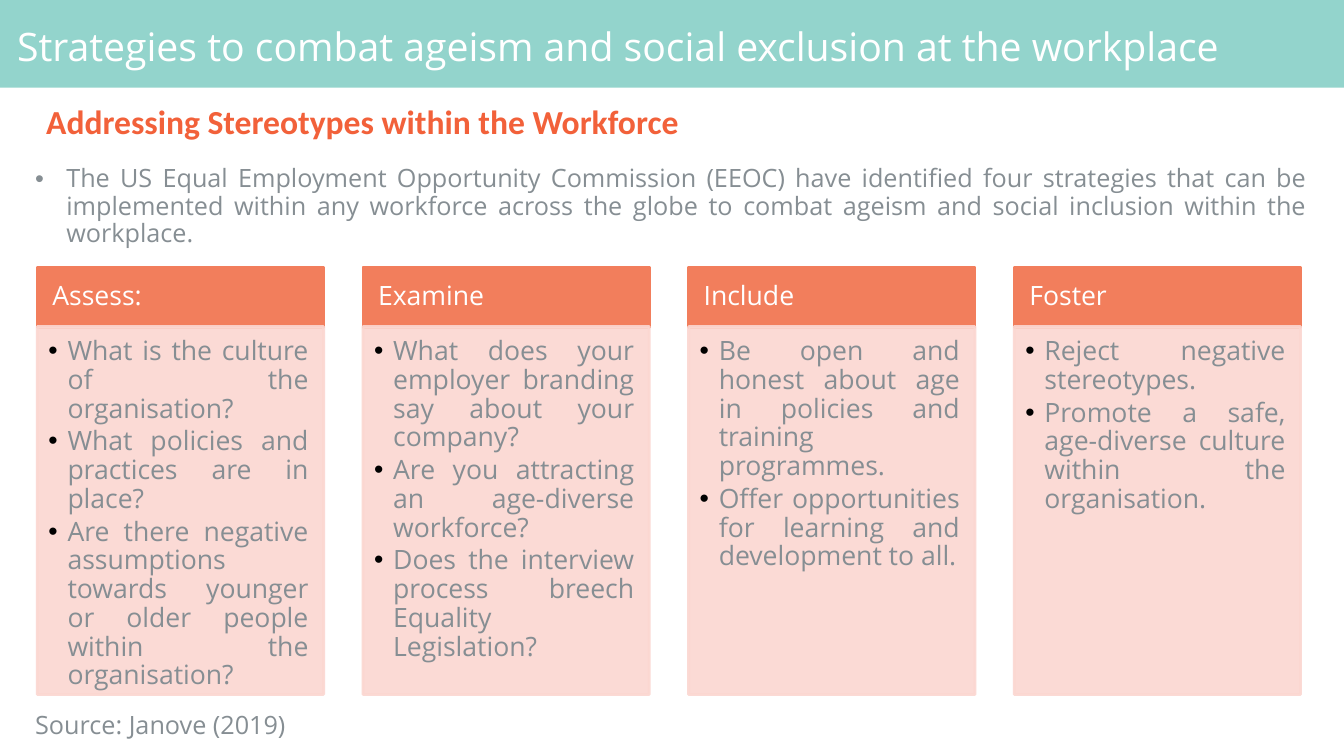
"""Build the slide on strategies against ageism at the workplace."""
import pptx
import pptx.dml.color
import pptx.enum.shapes
import pptx.enum.text
import pptx.oxml
import pptx.oxml.ns
import pptx.util

Inches, Pt = pptx.util.Inches, pptx.util.Pt
ALIGN = pptx.enum.text.PP_ALIGN
ANCHOR = pptx.enum.text.MSO_ANCHOR

TITLE = "Strategies to combat ageism and social exclusion at the workplace"
HEADING = "Addressing Stereotypes within the Workforce"
INTRO = ("The US Equal Employment Opportunity Commission (EEOC) have identified four "
         "strategies that can be implemented within any workforce across the globe to "
         "combat ageism and social inclusion within the workplace.")
SOURCE = "Source: Janove (2019)"
STRATEGIES = [
    ("Assess:", ["What is the culture of the organisation?",
                 "What policies and practices are in place?",
                 "Are there negative assumptions towards younger or older people "
                 "within the organisation?"]),
    ("Examine", ["What does your employer branding say about your company?",
                 "Are you attracting an age-diverse workforce?",
                 "Does the interview process breech Equality Legislation?"]),
    ("Include", ["Be open and honest about age in policies and training programmes.",
                 "Offer opportunities for learning and development to all."]),
    ("Foster", ["Reject negative stereotypes.",
                "Promote a safe, age-diverse culture within the organisation."]),
]
TEAL, ORANGE, RED, PINK = "93D4CC", "F27E5C", "F2613A", "FBD7D1"
GREY, WHITE, BLACK = "868E93", "FFFFFF", "000000"
LEFT, PITCH, CARD_W = 0.37, 3.23, 2.84
HEAD_TOP, HEAD_H, LIST_H = 2.65, 0.6, 3.65
LIST_TOP = HEAD_TOP + HEAD_H - 0.01


def rgb(value):
    return pptx.dml.color.RGBColor.from_string(value)


def add_rect(s, box, color, border=False, alpha=None):
    sp = s.shapes.add_shape(pptx.enum.shapes.MSO_SHAPE.RECTANGLE, *map(Inches, box))
    sp.shadow.inherit = False
    sp.fill.solid()
    sp.fill.fore_color.rgb = rgb(color)
    if border:
        sp.line.color.rgb = rgb(color)
        sp.line.width = Pt(2)
    else:
        sp.line.fill.background()
    if alpha:
        for clr in sp._element.spPr.iter(pptx.oxml.ns.qn("a:srgbClr")):
            clr.append(pptx.oxml.parse_xml(
                f'<a:alpha {pptx.oxml.ns.nsdecls("a")} val="{alpha * 1000}"/>'))
    return sp


def add_bullet(p, color):
    for xml in (f'<a:buClr {{}}><a:srgbClr val="{color}"/></a:buClr>',
                '<a:buFont {} typeface="Arial"/>', '<a:buChar {} char="•"/>'):
        p._p.get_or_add_pPr().append(
            pptx.oxml.parse_xml(xml.format(pptx.oxml.ns.nsdecls("a"))))


def write(sp, lines, size, color, insets=(0.1, 0.05, 0.1, 0.05), anchor=ANCHOR.TOP,
          align=ALIGN.JUSTIFY, font="Open Sans", bold=False, indent=(0, 0),
          bullet=None, gap=0):
    tf = sp.text_frame
    tf.word_wrap = True
    tf.vertical_anchor = anchor
    tf.margin_left, tf.margin_top, tf.margin_right, tf.margin_bottom = map(Inches, insets)
    for i, line in enumerate(lines):
        p = tf.add_paragraph() if i else tf.paragraphs[0]
        p.text = line
        p.alignment = align
        p.line_spacing = 0.9
        p.space_before = Pt(gap if i else 0)
        pPr = p._p.get_or_add_pPr()
        pPr.set("marL", str(Inches(indent[0])))
        pPr.set("indent", str(Inches(indent[1])))
        if bullet:
            add_bullet(p, bullet)
        for r in p.runs:
            r.font.size, r.font.name, r.font.bold = Pt(size), font, bold
            r.font.color.rgb = rgb(color)


def add_text(s, box, text, size, color, **style):
    write(s.shapes.add_textbox(*map(Inches, box)), [text], size, color, **style)


def main():
    prs = pptx.Presentation()
    prs.slide_width, prs.slide_height = Inches(13.33), Inches(7.5)
    s = prs.slides.add_slide(prs.slide_layouts[6])

    add_rect(s, (0, 0, 13.33, 0.87), TEAL)
    add_text(s, (0.11, 0.09, 13.06, 0.78), TITLE, 28, WHITE, insets=(0.06,) * 4,
             anchor=ANCHOR.MIDDLE, align=ALIGN.LEFT)
    add_text(s, (0.11, 0.93, 13.06, 0.6), HEADING, 24, RED, font="Calibri", bold=True,
             anchor=ANCHOR.MIDDLE, indent=(0.5, -0.25))
    add_text(s, (0, 1.6, 13.06, 1), INTRO, 18, GREY, indent=(0.56, -0.31), bullet=GREY)
    add_text(s, (0, 7.02, 13.06, 0.38), SOURCE, 18, GREY, indent=(0.25, 0),
             anchor=ANCHOR.MIDDLE)

    for i, (name, points) in enumerate(STRATEGIES):
        x = LEFT + i * PITCH
        head = add_rect(s, (x, HEAD_TOP, CARD_W, HEAD_H), ORANGE, border=True)
        write(head, [name], 19, WHITE, insets=(0.15, 0.08, 0.15, 0.08),
              anchor=ANCHOR.MIDDLE)
        body = add_rect(s, (x, LIST_TOP, CARD_W, LIST_H), PINK, border=True, alpha=90)
        write(body, points, 19, GREY, insets=(0.11, 0.11, 0.15, 0.17),
              indent=(0.19, -0.19), bullet=BLACK, gap=2.9)

    prs.save("out.pptx")


if __name__ == "__main__":
    main()
